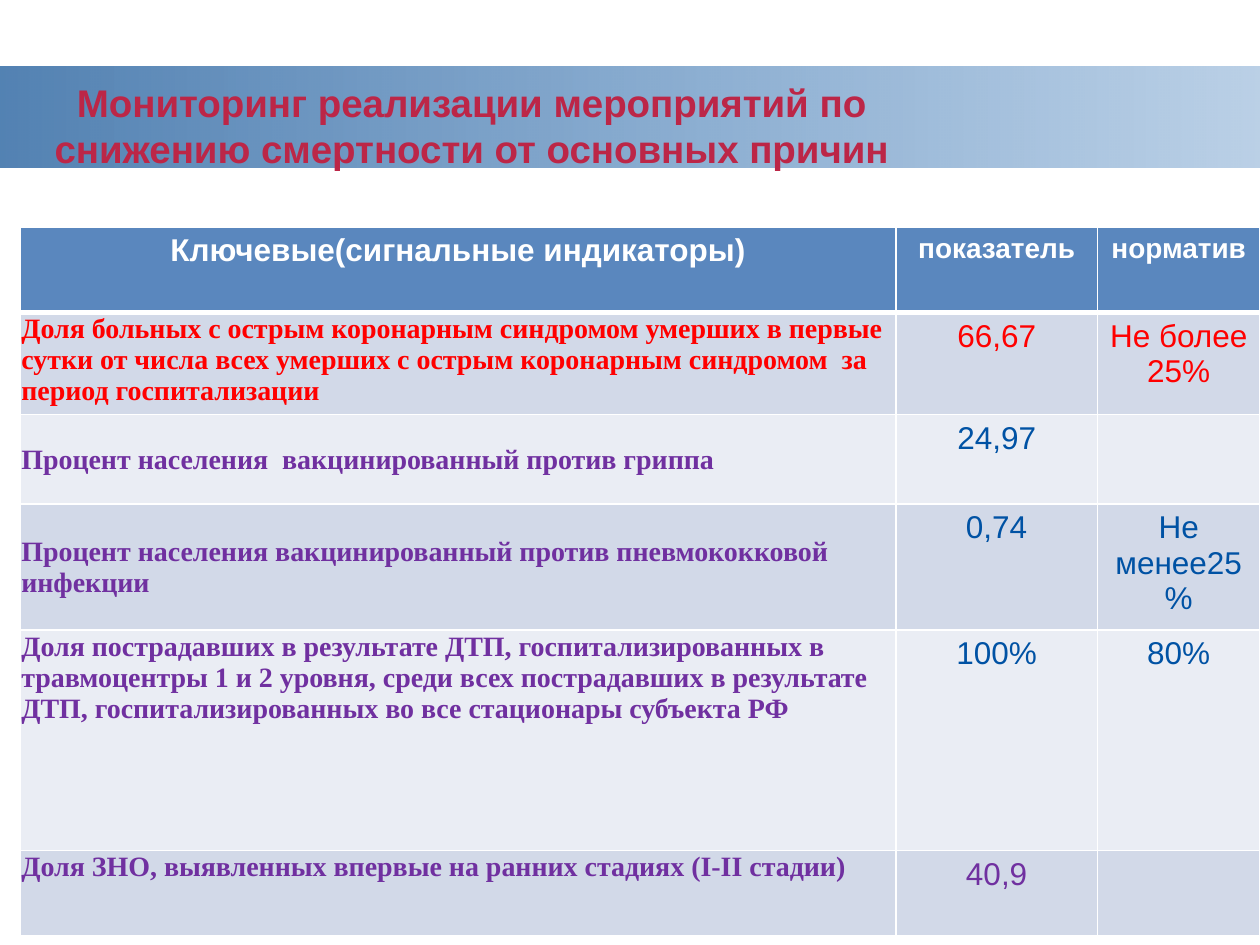
from lxml import etree
from pptx import Presentation, util as u
from pptx.dml.color import RGBColor
from pptx.enum import shapes, text
from pptx.oxml.ns import qn

W, H = 10, 7.5
RED, PURPLE, BLUE, WHITE = "FF0000", "7030A0", "0052A4", "FFFFFF"
HEADER_FILL, BANDS = "5A87BE", ("D2D9E8", "EAEDF4")
TOP, MIDDLE = text.MSO_ANCHOR.TOP, text.MSO_ANCHOR.MIDDLE

COLS = (6.95, 1.6, 1.29)
ROWS = (0.68, 0.71, 0.71, 0.71, 1.75, 0.68)
HEADER = ("Ключевые(сигнальные индикаторы)", "показатель", "норматив")
# indicator, value, norm, indicator colour, value colour, indicator anchor
INDICATORS = [
    ("Доля больных с острым коронарным синдромом умерших в первые сутки от числа "
     "всех умерших с острым коронарным синдромом  за период госпитализации",
     "66,67", "Не более 25%", RED, RED, TOP),
    ("Процент населения  вакцинированный против гриппа",
     "24,97", "", PURPLE, BLUE, MIDDLE),
    ("Процент населения вакцинированный против пневмококковой инфекции",
     "0,74", "Не менее25%", PURPLE, BLUE, MIDDLE),
    ("Доля пострадавших в результате ДТП, госпитализированных в травмоцентры "
     "1 и 2 уровня, среди всех пострадавших в результате ДТП, "
     "госпитализированных во все стационары субъекта РФ",
     "100%", "80%", PURPLE, BLUE, TOP),
    ("Доля ЗНО, выявленных впервые на ранних стадиях (I-II стадии)",
     "40,9", "", PURPLE, PURPLE, TOP),
]


def rgb(color):
    return RGBColor.from_string(color)


def inches(*lengths):
    return [u.Inches(v) for v in lengths]


def write(tf, words, size=18, font="Arial", color=BLUE, bold=False, center=True):
    p = tf.paragraphs[0]
    p.alignment = text.PP_ALIGN.CENTER if center else text.PP_ALIGN.LEFT
    p.font.size = u.Pt(size)
    if words:
        r = p.add_run()
        r.text = words
        r.font.size, r.font.name, r.font.bold = u.Pt(size), font, bold
        r.font.color.rgb = rgb(color)


def add_band(s, box):
    sp = s.shapes.add_shape(shapes.MSO_SHAPE.RECTANGLE, *inches(*box))
    sp.shadow.inherit = False
    sp.line.fill.background()
    sp.fill.gradient()
    sp.fill.gradient_angle = 0
    for stop, color in zip(sp.fill.gradient_stops, ("00478F", BLUE)):
        stop.color.rgb = rgb(color)
    # Opacity of the two stops
    for clr, share in zip(sp.element.iter(qn("a:srgbClr")), (68, 27)):
        etree.SubElement(clr, qn("a:alpha"), val=str(share * 1000))


def add_title(s, box):
    tf = s.shapes.add_textbox(*inches(*box)).text_frame
    tf.word_wrap = True
    tf.vertical_anchor = MIDDLE
    write(tf, "Мониторинг реализации мероприятий по снижению смертности "
          "от основных причин", size=22, color="BC2647", bold=True)


def style_cell(cell, fill, top=1, bottom=1):
    tc_pr = cell._tc.get_or_add_tcPr()
    for side, width in (("L", 1), ("R", 1), ("T", top), ("B", bottom)):
        ln = etree.SubElement(tc_pr, qn("a:ln" + side), w=str(u.Pt(width)))
        solid = etree.SubElement(ln, qn("a:solidFill"))
        etree.SubElement(solid, qn("a:srgbClr"), val=WHITE)
    cell.fill.solid()
    cell.fill.fore_color.rgb = rgb(fill)


def add_indicators(s, box):
    table = s.shapes.add_table(len(ROWS), len(COLS), *inches(*box)).table
    for col, width in zip(table.columns, COLS):
        col.width = u.Inches(width)
    for row, height in zip(table.rows, ROWS):
        row.height = u.Inches(height)

    # Header row
    for i, (words, size) in enumerate(zip(HEADER, (18, 16, 16))):
        cell = table.cell(0, i)
        style_cell(cell, HEADER_FILL, bottom=3)
        write(cell.text_frame, words, size=size, color=WHITE, bold=True)

    # Banded indicator rows
    for n, (name, value, norm, name_color, color, anchor) in enumerate(INDICATORS):
        cells = [table.cell(n + 1, i) for i in range(len(COLS))]
        for cell in cells:
            style_cell(cell, BANDS[n % 2], top=1 if n else 3)
        first = cells[0]
        first.margin_left = first.margin_right = first.margin_top = u.Inches(0.01)
        first.margin_bottom = 0
        first.vertical_anchor = anchor
        write(first.text_frame, name, size=16, font="Times New Roman",
              color=name_color, bold=True, center=False)
        for cell, words in zip(cells[1:], (value, norm)):
            write(cell.text_frame, words, color=color)


def main():
    prs = Presentation()
    prs.slide_width, prs.slide_height = inches(W, H)
    s = prs.slides.add_slide(prs.slide_layouts[6])
    add_band(s, (0, 0.53, W, 0.8))
    add_title(s, (0.23, 0.47, 7.03, 1.05))
    add_indicators(s, (W - sum(COLS), 1.8, sum(COLS), sum(ROWS)))
    prs.save("out.pptx")


if __name__ == "__main__":
    main()
